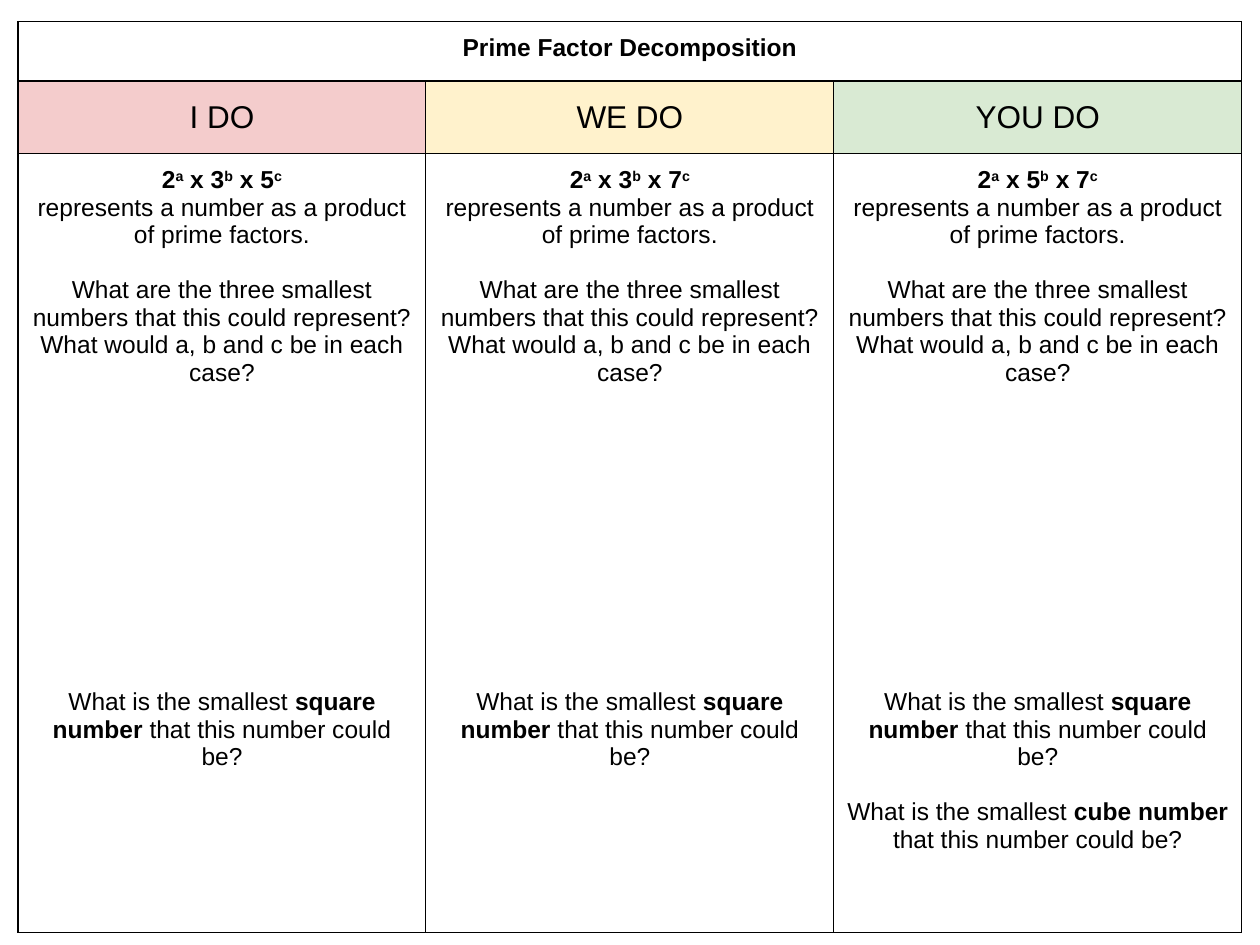
from dataclasses import dataclass

from lxml.etree import SubElement
from pptx import Presentation
from pptx.dml.color import RGBColor as RGB
from pptx.enum.text import MSO_ANCHOR as Anchor, PP_ALIGN as Align
from pptx.oxml.ns import qn
from pptx.util import Pt


@dataclass(frozen=True)
class Theme:
    font: str = "Arial"
    ink: str = "000000"
    heads: tuple = ("F4CCCC", "FFF2CC", "D9EAD3")
    body: float = 14
    head: float = 18
    rule: float = 0.75
    inset: float = 7.2
    line: float = 15.7
    work: float = 172.7  # room for eleven lines of working


THEME = Theme()
HEADS = ("I DO", "WE DO", "YOU DO")
BASES = ((2, 3, 5), (2, 3, 7), (2, 5, 7))
KINDS = (("square",), ("square",), ("square", "cube"))
ROWS = (34, 41.5, 445)


def add_run(para, text, size=THEME.body, bold=False, raised=False):
    run = para.add_run()
    run.text = text
    font = run.font
    font.name, font.size, font.bold = THEME.font, Pt(size), bold
    font.color.rgb = RGB.from_string(THEME.ink)
    if raised:
        run._r.get_or_add_rPr().set("baseline", "30000")


def add_para(cell, gap=0):
    """Start a centred paragraph, using the cell's first one if it is empty."""
    frame = cell.text_frame
    para = frame.paragraphs[-1]
    if para.runs:
        para = frame.add_paragraph()
    para.alignment = Align.CENTER
    para.space_before = Pt(gap)
    return para


def style_cell(cell, fill=None):
    """Set the insets, black rules and fill of a cell."""
    cell.margin_left = cell.margin_right = Pt(THEME.inset)
    cell.margin_top = cell.margin_bottom = Pt(THEME.inset)
    props = cell._tc.get_or_add_tcPr()
    for side in ("lnL", "lnR", "lnT", "lnB"):
        edge = SubElement(props, qn(f"a:{side}"), w=str(Pt(THEME.rule)))
        solid = SubElement(edge, qn("a:solidFill"))
        SubElement(solid, qn("a:srgbClr"), val=THEME.ink)
    if fill:
        cell.fill.solid()
        cell.fill.fore_color.rgb = RGB.from_string(fill)
    else:
        cell.fill.background()


def fill_head(cell, text):
    cell.vertical_anchor = Anchor.MIDDLE
    add_run(add_para(cell), text, THEME.head)


def fill_task(cell, bases, kinds):
    """Write the product of primes and the questions about it."""
    para = add_para(cell)
    for i, (base, power) in enumerate(zip(bases, "abc")):
        add_run(para, f" x {base}" if i else str(base), bold=True)
        add_run(para, power, bold=True, raised=True)
    for text, gap in (
        ("represents a number as a product of prime factors.", 0),
        ("What are the three smallest numbers that this could represent?", THEME.line),
        ("What would a, b and c be in each case?", 0),
    ):
        add_run(add_para(cell, gap), text)
    for i, kind in enumerate(kinds):
        para = add_para(cell, THEME.line if i else THEME.work)
        add_run(para, "What is the smallest ")
        add_run(para, f"{kind} number", bold=True)
        add_run(para, " that this number could be?")


def add_grid(slide, left, top, width):
    count = len(HEADS)
    table = slide.shapes.add_table(
        len(ROWS), count, Pt(left), Pt(top), Pt(width), Pt(sum(ROWS))
    ).table
    table.first_row = table.horz_banding = False
    for row, high in zip(table.rows, ROWS):
        row.height = Pt(high)
    for col in table.columns:
        col.width = Pt(width / count)

    for c in range(count):
        for r in range(len(ROWS)):
            style_cell(table.cell(r, c), THEME.heads[c] if r == 1 else None)
        fill_head(table.cell(1, c), HEADS[c])
        fill_task(table.cell(2, c), BASES[c], KINDS[c])
    title = table.cell(0, 0)
    title.merge(table.cell(0, count - 1))
    add_run(add_para(title), "Prime Factor Decomposition", bold=True)


def main():
    deck = Presentation()
    deck.slide_width, deck.slide_height = Pt(720), Pt(540)
    slide = deck.slides.add_slide(deck.slide_layouts[6])
    add_grid(slide, 10.3, 12.3, 699.3)
    deck.save("out.pptx")


if __name__ == "__main__":
    main()
